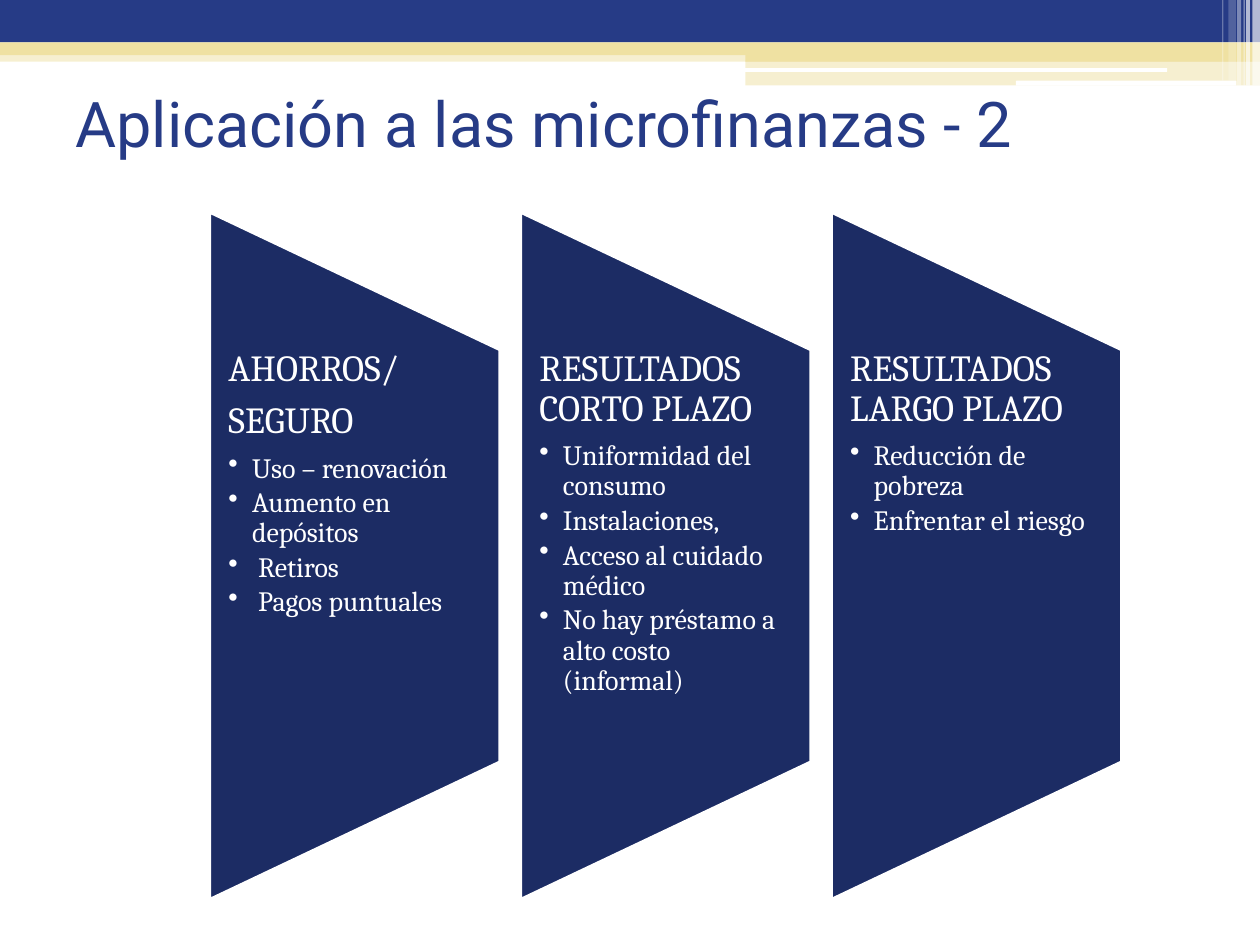
from dataclasses import dataclass

from lxml.etree import SubElement
from pptx import Presentation
from pptx.dml.color import RGBColor
from pptx.enum.shapes import MSO_SHAPE as Preset
from pptx.enum.text import MSO_ANCHOR as Anchor
from pptx.oxml.ns import qn
from pptx.util import Pt


@dataclass(frozen=True)
class Theme:
    blue: str = "263B86"
    navy: str = "1C2C64"
    sand: str = "EFE1A2"
    white: str = "FFFFFF"
    title_font: str = "Roboto"
    body_font: str = "Cambria"
    title_size: float = 36
    heading_size: float = 21
    bullet_size: float = 16


@dataclass(frozen=True)
class Band:
    left: float
    top: float
    width: float
    height: float
    color: str
    opacity: int = 100
    preset: Preset = Preset.RECTANGLE


@dataclass(frozen=True)
class Panel:
    headings: tuple[str, ...]
    bullets: tuple[str, ...]


THEME = Theme()
PAGE_WIDTH, PAGE_HEIGHT = 720, 540
PANEL_LEFT, PANEL_PITCH, PANEL_WIDTH = 120, 177.6, 165.6
PANEL_HEIGHT, PANEL_MIDDLE = 392.4, 317.6
TEXT_TOP, TEXT_HEIGHT = 200, 235.4
BULLET_INDENT = 13.5

BANDS = (
    Band(0, 28.8, 720, 6.5, THEME.sand, 50),
    Band(0, 0, 720, 24.3, THEME.blue),
    Band(0, 24.3, 720, 7.2, THEME.sand),
    Band(426, 28.1, 294, 7.2, THEME.sand),
    Band(426, 34.6, 294, 14.2, THEME.sand, 50),
    Band(425.5, 38.9, 241.5, 2.2, THEME.white, preset=Preset.ROUNDED_RECTANGLE),
    Band(580.5, 46.1, 126, 2.9, THEME.white, preset=Preset.ROUNDED_RECTANGLE),
    Band(715.7, 0, 4.3, 49, THEME.white, 65),
    Band(712.1, 0, 2.2, 49, THEME.white, 65),
    Band(710.6, 0, 0.7, 49, THEME.white, 60),
    Band(707, 0, 2.2, 49, THEME.white, 40),
    Band(702, 0, 4.3, 46.1, THEME.white, 20),
    Band(698.4, 0, 0.7, 46.1, THEME.white, 30),
)

PANELS = (
    Panel(
        ("AHORROS/", "SEGURO"),
        ("Uso – renovación", "Aumento en depósitos", " Retiros", " Pagos puntuales"),
    ),
    Panel(
        ("RESULTADOS CORTO PLAZO",),
        (
            "Uniformidad del consumo",
            "Instalaciones,",
            "Acceso al cuidado médico",
            "No hay préstamo a alto costo (informal)",
        ),
    ),
    Panel(
        ("RESULTADOS LARGO PLAZO",),
        ("Reducción de pobreza", "Enfrentar el riesgo"),
    ),
)


def draw_shape(page, preset: Preset, left: float, top: float,
               width: float, height: float, color: str):
    """Add a flat, filled shape without outline or shadow."""
    shape = page.shapes.add_shape(preset, Pt(left), Pt(top), Pt(width), Pt(height))
    shape.shadow.inherit = False
    shape.fill.solid()
    shape.fill.fore_color.rgb = RGBColor.from_string(color)
    shape.line.fill.background()
    return shape


def draw_band(page, band: Band) -> None:
    shape = draw_shape(page, band.preset, band.left, band.top,
                       band.width, band.height, band.color)
    if band.opacity < 100:
        color = shape._element.spPr.find(qn("a:solidFill"))[0]
        SubElement(color, qn("a:alpha"), val=str(band.opacity * 1000))


def add_text_frame(page, left: float, top: float, width: float,
                   height: float, side_margin: float):
    box = page.shapes.add_textbox(Pt(left), Pt(top), Pt(width), Pt(height))
    frame = box.text_frame
    frame.word_wrap = True
    frame.vertical_anchor = Anchor.TOP
    frame.margin_left = frame.margin_right = Pt(side_margin)
    frame.margin_top = frame.margin_bottom = 0
    return frame


def write(para, text: str, font: str, size: float, color: str) -> None:
    para.text = text
    para.font.name = font
    para.font.size = Pt(size)
    para.font.color.rgb = RGBColor.from_string(color)


def add_bullet(para) -> None:
    """Give the paragraph a round bullet with a hanging indent."""
    properties = para._p.get_or_add_pPr()
    properties.set("marL", str(Pt(BULLET_INDENT)))
    properties.set("indent", str(-Pt(BULLET_INDENT)))
    bullet = properties.makeelement(qn("a:buChar"), {"char": "•"})
    properties.insert_element_before(bullet, "a:tabLst", "a:defRPr", "a:extLst")


def draw_title(page) -> None:
    frame = add_text_frame(page, 36, 48.2, 648, 84.2, 7.2)
    write(frame.paragraphs[0], "Aplicación a las microfinanzas - 2",
          THEME.title_font, THEME.title_size, THEME.blue)


def draw_panel(page, panel: Panel, left: float) -> None:
    """Draw a trapezoid turned on its side, with its headings and bullets."""
    shape = draw_shape(page, Preset.FLOWCHART_MANUAL_OPERATION,
                       left + (PANEL_WIDTH - PANEL_HEIGHT) / 2,
                       PANEL_MIDDLE - PANEL_WIDTH / 2,
                       PANEL_HEIGHT, PANEL_WIDTH, THEME.navy)
    shape.rotation = 270
    shape.line.color.rgb = RGBColor.from_string(THEME.white)
    shape.line.width = Pt(1.5)

    frame = add_text_frame(page, left, TEXT_TOP, PANEL_WIDTH, TEXT_HEIGHT, 10.6)
    for index, text in enumerate(panel.headings + panel.bullets):
        para = frame.add_paragraph() if index else frame.paragraphs[0]
        is_heading = index < len(panel.headings)
        size = THEME.heading_size if is_heading else THEME.bullet_size
        write(para, text, THEME.body_font, size, THEME.white)
        para.line_spacing = 0.9
        para.space_after = Pt(7 if is_heading else 2.5)
        if not is_heading:
            add_bullet(para)


def main() -> None:
    deck = Presentation()
    deck.slide_width, deck.slide_height = Pt(PAGE_WIDTH), Pt(PAGE_HEIGHT)
    page = deck.slides.add_slide(deck.slide_layouts[6])
    for band in BANDS:
        draw_band(page, band)
    draw_title(page)
    for index, panel in enumerate(PANELS):
        draw_panel(page, panel, PANEL_LEFT + index * PANEL_PITCH)
    deck.save("out.pptx")


if __name__ == "__main__":
    main()
